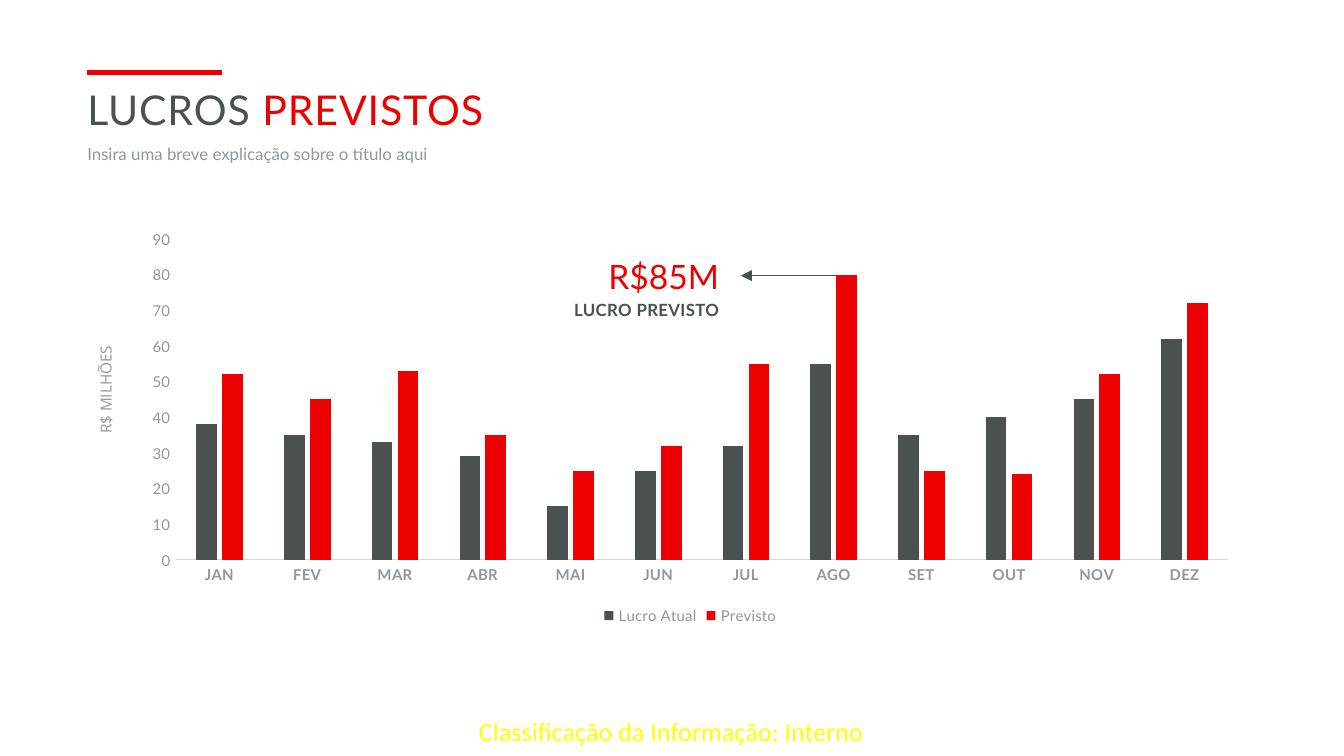
from pptx import Presentation
from pptx.chart.data import CategoryChartData
from pptx.dml.color import RGBColor
from pptx.enum.chart import XL_CHART_TYPE as ChartType, XL_LEGEND_POSITION as LegendPos, XL_TICK_MARK as Tick
from pptx.enum.shapes import MSO_CONNECTOR as Connector
from pptx.enum.text import MSO_ANCHOR as Anchor, PP_ALIGN as Align
from pptx.oxml.ns import qn
from pptx.util import Cm, Pt
from lxml.etree import SubElement

DARK, RED, GRAY, YELLOW, AXIS = "4B5050", "EC0000", "91969B", "FFFF00", "D9D9D9"
MONTHS = ["JAN", "FEV", "MAR", "ABR", "MAI", "JUN", "JUL", "AGO", "SET", "OUT", "NOV", "DEZ"]
PROFITS = [
    ("Lucro Atual", DARK, [38, 35, 33, 29, 15, 25, 32, 55, 35, 40, 45, 62]),
    ("Previsto", RED, [52, 45, 53, 35, 25, 32, 55, 80, 25, 24, 52, 72]),
]


def rgb(value):
    return RGBColor.from_string(value)


def style(font, size, color, bold=False, name="Lato"):
    font.name, font.size, font.bold = name, Pt(size), bold
    font.color.rgb = rgb(color)


def add_text(slide, box, pieces, size, align=Align.LEFT, bold=False, name="Lato", spacing=0):
    label = slide.shapes.add_textbox(*map(Cm, box))
    frame = label.text_frame
    frame.word_wrap = True
    frame.margin_left = frame.margin_right = frame.margin_top = frame.margin_bottom = 0
    paragraph = frame.paragraphs[0]
    paragraph.alignment = align
    for words, color in pieces:
        run = paragraph.add_run()
        run.text = words
        style(run.font, size, color, bold, name)
        if spacing:
            run.font._element.set("spc", str(spacing))
    return label


def add_line(slide, start, end, color, width, arrow=False):
    line = slide.shapes.add_connector(Connector.STRAIGHT, *map(Cm, start + end))
    line.line.color.rgb = rgb(color)
    line.line.width = Pt(width)
    if arrow:
        SubElement(line.line._get_or_add_ln(), qn("a:tailEnd"), type="triangle")
    SubElement(line._element.spPr, qn("a:effectLst"))


def add_heading(slide, left, top, width):
    add_line(slide, (left, top), (left + 2.54, top), RED, 2.25)
    add_text(slide, (left, top + 0.23, width, 1.07), [("LUCROS ", DARK), ("PREVISTOS", RED)], 22, spacing=50)
    subtitle = add_text(slide, (left, top + 1.3, width, 0.38),
                        [("Insira uma breve explicação sobre o título aqui", GRAY)], 9)
    subtitle.text_frame.paragraphs[0].line_spacing = Pt(12)


def add_profit_chart(slide, left, top, width, height):
    data = CategoryChartData(number_format="0")
    data.categories = MONTHS
    for name, _, values in PROFITS:
        data.add_series(name, values)
    chart = slide.shapes.add_chart(
        ChartType.COLUMN_CLUSTERED, *map(Cm, (left, top, width, height)), data).chart
    style(chart.font, 8, GRAY)
    chart.has_title = False
    chart.has_legend = True
    chart.legend.position = LegendPos.BOTTOM
    chart.legend.include_in_layout = False
    style(chart.legend.font, 8, GRAY)

    plot = chart.plots[0]
    plot.gap_width, plot.overlap, plot.vary_by_categories = 200, -26, False
    for series, (_, color, _) in zip(plot.series, PROFITS):
        series.format.fill.solid()
        series.format.fill.fore_color.rgb = rgb(color)
        series.invert_if_negative = False

    months, amounts = chart.category_axis, chart.value_axis
    for axis in (months, amounts):
        axis.major_tick_mark = axis.minor_tick_mark = Tick.NONE
        axis.has_major_gridlines = False
        style(axis.tick_labels.font, 8, GRAY, bold=axis is months)
    months.format.line.color.rgb = rgb(AXIS)
    months.format.line.width = Pt(0.75)
    amounts.format.line.fill.background()
    amounts.minimum_scale, amounts.maximum_scale, amounts.major_unit = 0, 90, 10
    amounts.tick_labels.number_format = "0"
    amounts.tick_labels.number_format_is_linked = False

    unit = add_text(slide, (left - 2.38, top + 3, 3.84, 0.36), [("R$ MILHÕES", GRAY)], 8.2,
                    Align.CENTER, name="Open Sans")
    unit.rotation = 270


def add_callout(slide, left, top, width):
    arrow_y = top + 0.38
    add_line(slide, (left + 5.94, arrow_y), (left + 4.14, arrow_y), DARK, 0.75, arrow=True)
    add_text(slide, (left, top, width, 0.76), [("R$85M", RED)], 18, Align.RIGHT)
    add_text(slide, (left, top + 0.84, width, 0.38), [("LUCRO PREVISTO", DARK)], 9,
             Align.RIGHT, bold=True, spacing=20)


def add_classification(slide, left, top, width, height):
    footer = add_text(slide, (left, top, width, height),
                      [("Classificação da Informação: Interno", YELLOW)], 14, Align.CENTER, name="Calibri")
    footer.text_frame.vertical_anchor = Anchor.MIDDLE


def main():
    deck = Presentation()
    deck.slide_width, deck.slide_height = Cm(25.4), Cm(14.29)
    slide = deck.slides.add_slide(deck.slide_layouts[6])
    add_classification(slide, 8.48, 13.36, 8.41, 0.91)
    add_heading(slide, 1.65, 1.37, 22.1)
    add_profit_chart(slide, 2.46, 4.19, 21.18, 7.72)
    add_callout(slide, 9.86, 4.83, 3.73)
    deck.save("out.pptx")


if __name__ == "__main__":
    main()
